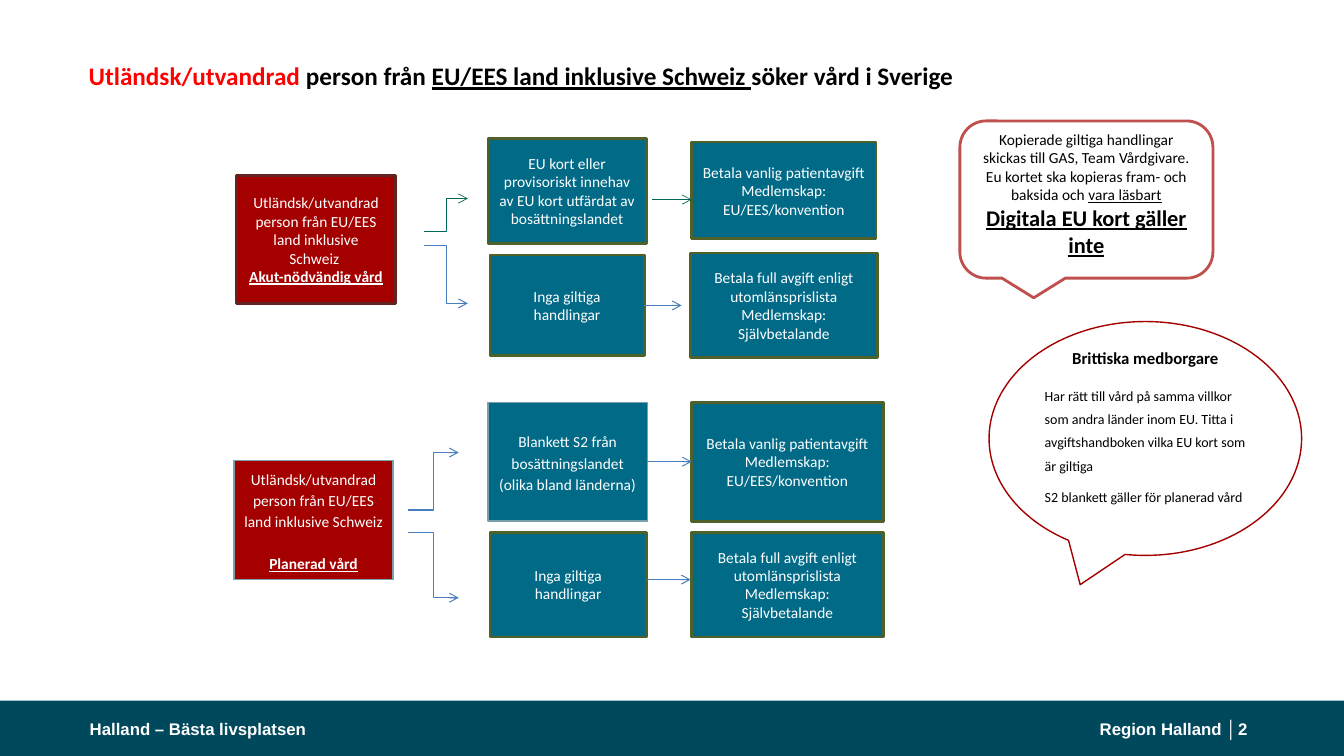
import pptx
import pptx.util
import pptx.dml.color
import pptx.enum.shapes
import pptx.enum.text
import pptx.oxml
import pptx.oxml.ns

Inches = pptx.util.Inches
Pt = pptx.util.Pt
RGBColor = pptx.dml.color.RGBColor
SHAPE = pptx.enum.shapes.MSO_SHAPE
LINK = pptx.enum.shapes.MSO_CONNECTOR
ALIGN = pptx.enum.text.PP_ALIGN
MIDDLE = pptx.enum.text.MSO_ANCHOR.MIDDLE

WHITE = RGBColor(0xFF, 0xFF, 0xFF)
BLACK = RGBColor(0, 0, 0)
BRIGHT = RGBColor(0xFF, 0, 0)
NAVY = RGBColor(0x00, 0x49, 0x5D)
TEAL = RGBColor(0x00, 0x6A, 0x87)
OLIVE = RGBColor(0x4E, 0x61, 0x28)
RED = RGBColor(0xA4, 0, 0)
MAROON = RGBColor(0x62, 0x24, 0x23)
CORAL = RGBColor(0xC0, 0x50, 0x4D)
STEEL = RGBColor(0x79, 0xA0, 0xAB)
BLUE = RGBColor(0x4B, 0x7E, 0xBC)
GREEN = RGBColor(0x00, 0x68, 0x58)

# Content: a text is a list of (runs, paragraph format); a run is (text, format)
STRONG = {"bold": True, "underline": True}
LOOSE = {"line_spacing": 1.15}
TITLE = [([("Utländsk/utvandrad ", {"color": BRIGHT}), ("person från ", {}),
           ("EU/EES land inklusive Schweiz ", {"underline": True}),
           ("söker vård i Sverige", {})], {"line_spacing": 0.9})]
FOOTER = [  # text, left, width, alignment
    ("Halland – Bästa livsplatsen", 0.89, 4.5, ALIGN.LEFT),
    ("Region Halland │", 10.7, 1.57, ALIGN.RIGHT),
    ("2", 12.28, 0.24, ALIGN.LEFT),
]
PERSON = "Utländsk/utvandrad person från EU/EES land inklusive Schweiz"
ACUTE = [([(PERSON + " \n", {}), ("Akut-nödvändig vård", STRONG)], {})]
PLANNED = [([(PERSON, {})], {"line_spacing": 1.15, "space_after": Pt(15)}),
           ([("Planerad vård", STRONG)], LOOSE)]
CARD = [([("EU kort eller provisoriskt innehav av EU kort utfärdat av "
           "bosättningslandet", {})], {})]
FORM = [([("Blankett S2 från bosättningslandet (olika bland länderna)", {})], LOOSE)]
NONE = [([("Inga giltiga handlingar", {})], {})]
USUAL = [([("Betala vanlig patientavgift", {})], {}),
         ([("Medlemskap: EU/EES/konvention", {})], {})]
FULL = [([("Betala full avgift enligt utomlänsprislista", {})], {}),
        ([("Medlemskap: Självbetalande", {})], {})]

BOXES = {  # text, left, top, width, height, fill, line, line width
    "acute": (ACUTE, 2.35, 1.74, 1.57, 1.27, RED, MAROON, 2),
    "card": (CARD, 4.84, 1.37, 1.57, 1.05, TEAL, OLIVE, 2),
    "no card": (NONE, 4.86, 2.53, 1.53, 1, TEAL, OLIVE, 2),
    "card fee": (USUAL, 6.86, 1.41, 1.83, 0.96, TEAL, OLIVE, 2),
    "no card fee": (FULL, 6.85, 2.51, 1.85, 1.04, TEAL, OLIVE, 2),
    "planned": (PLANNED, 2.32, 4.57, 1.58, 1.18, RED, STEEL, 1),
    "form": (FORM, 4.84, 3.99, 1.58, 1.18, TEAL, STEEL, 1),
    "no form": (NONE, 4.86, 5.28, 1.55, 1.04, TEAL, OLIVE, 2),
    "form fee": (USUAL, 6.86, 3.99, 1.9, 1.18, TEAL, OLIVE, 2),
    "no form fee": (FULL, 6.86, 5.28, 1.9, 1.04, TEAL, OLIVE, 2),
}
ELBOWS = [  # start, end, colour, width
    ((4.21, 2.3), (4.64, 1.97), GREEN, 0.5),
    ((4.21, 2.44), (4.64, 3.01), BLUE, 0.75),
    ((4.05, 5.06), (4.55, 4.49), BLUE, 0.75),
    ((4.05, 5.28), (4.55, 5.93), BLUE, 0.75),
]
ARROWS = [  # start, end, colour, width; a named end sits on that box's side
    ((6.47, 1.98), (6.86, 1.98), GREEN, 0.5),
    ("no card", (6.76, 3.03), BLUE, 0.75),
    ("form", "form fee", BLUE, 0.75),
    ((6.42, 5.75), (6.85, 5.75), BLUE, 0.75),
]

COPIES = [
    ([("Kopierade giltiga handlingar skickas till GAS, Team Vårdgivare.", {})], {}),
    ([("Eu kortet ska kopieras fram- och baksida och ", {}),
      ("vara läsbart", {"underline": True})], {}),
    ([("Digitala EU kort gäller inte", {"size": Pt(16), **STRONG})], {}),
]
NOTE = {"alignment": ALIGN.LEFT, "line_spacing": Pt(16.5), "space_after": Pt(6)}
BRITISH = [
    ([("Brittiska medborgare", {"size": Pt(12), "bold": True})],
     {"line_spacing": 1.15, "space_after": Pt(10)}),
    ([("Har rätt till vård på samma villkor som andra länder inom EU. Titta i "
       "avgiftshandboken vilka EU kort som är giltiga", {})], NOTE),
    ([("S2 blankett gäller för planerad vård", {})],
     {"alignment": ALIGN.LEFT, "line_spacing": Pt(16.5)}),
]

deck = pptx.Presentation()
deck.slide_width, deck.slide_height = Inches(13.33), Inches(7.5)
slide = deck.slides.add_slide(deck.slide_layouts[6])


def write(shape, text, size, color, align=ALIGN.CENTER, face="Calibri", bold=None):
    frame = shape.text_frame
    frame.word_wrap = True
    frame.vertical_anchor = MIDDLE
    for i, (runs, form) in enumerate(text):
        para = frame.add_paragraph() if i else frame.paragraphs[0]
        para.alignment = align
        for key, value in form.items():
            setattr(para, key, value)
        for words, look in runs:
            run = para.add_run()
            run.text = words.rstrip("\n")
            font = run.font
            font.name, font.size, font.bold = face, Pt(size), bold
            font.color.rgb = look.get("color", color)
            for key, value in look.items():
                if key != "color":
                    setattr(font, key, value)
            if words.endswith("\n"):
                para.add_line_break()


def label(text, left, top, width, height, size, color, align, face):
    box = slide.shapes.add_textbox(*map(Inches, (left, top, width, height)))
    frame = box.text_frame
    frame.margin_left = frame.margin_right = 0
    frame.margin_top = frame.margin_bottom = 0
    write(box, text, size, color, align, face, True)


def block(kind, area, fill, line=None, width=0):
    shape = slide.shapes.add_shape(kind, *map(Inches, area))
    shape.shadow.inherit = False
    shape.fill.solid()
    shape.fill.fore_color.rgb = fill
    if line is None:
        shape.line.fill.background()
    else:
        shape.line.color.rgb = line
        shape.line.width = Pt(width)
    return shape


def arrow(kind, start, end, color, width):
    ends = []
    for spot, side in ((start, 1), (end, 0)):
        if isinstance(spot, str):
            _, left, top, wide, high = BOXES[spot][:5]
            spot = (left + wide * side, top + high / 2)
        ends += map(Inches, spot)
    link = slide.shapes.add_connector(kind, *ends)
    if isinstance(start, str):
        link.begin_connect(boxes[start], 3)
    if isinstance(end, str):
        link.end_connect(boxes[end], 1)
    link.line.color.rgb = color
    link.line.width = Pt(width)
    tip = pptx.oxml.parse_xml('<a:tailEnd %s type="arrow"/>' % pptx.oxml.ns.nsdecls("a"))
    link.line._get_or_add_ln().append(tip)
    flat = pptx.oxml.parse_xml("<a:effectLst %s/>" % pptx.oxml.ns.nsdecls("a"))
    link._element.spPr.append(flat)


# Footer and title
block(SHAPE.RECTANGLE, (0, 6.95, 13.33, 0.55), NAVY)
for words, left, width, align in FOOTER:
    label([([(words, {})], {})], left, 7.06, width, 0.35, 12, WHITE, align, "Arial")
label(TITLE, 0.88, 0.33, 11.58, 0.88, 18, BLACK, ALIGN.LEFT, "Calibri")

# Flow boxes
boxes = {}
for name, (text, *area, fill, line, width) in BOXES.items():
    boxes[name] = block(SHAPE.RECTANGLE, area, fill, line, width)
    write(boxes[name], text, 11, WHITE)
for side in ("margin_left", "margin_right"):
    setattr(boxes["planned"].text_frame, side, Inches(0.08))

# Arrows
for elbow in ELBOWS:
    arrow(LINK.ELBOW, *elbow)
for straight in ARROWS:
    arrow(LINK.STRAIGHT, *straight)

# Callouts
copies = block(SHAPE.ROUNDED_RECTANGULAR_CALLOUT, (9.52, 1.2, 2.51, 1.56), WHITE, CORAL, 2)
for i, value in enumerate((-0.208, 0.625, 0.167)):
    copies.adjustments[i] = value
copies.text_frame.margin_bottom = Inches(0.16)
write(copies, COPIES, 11, BLACK)

british = block(SHAPE.OVAL_CALLOUT, (9.81, 3.19, 3.1, 2.32), WHITE, RED, 1)
british.text_frame.margin_bottom = Inches(0.32)
write(british, BRITISH, 10, BLACK)

deck.save("out.pptx")
